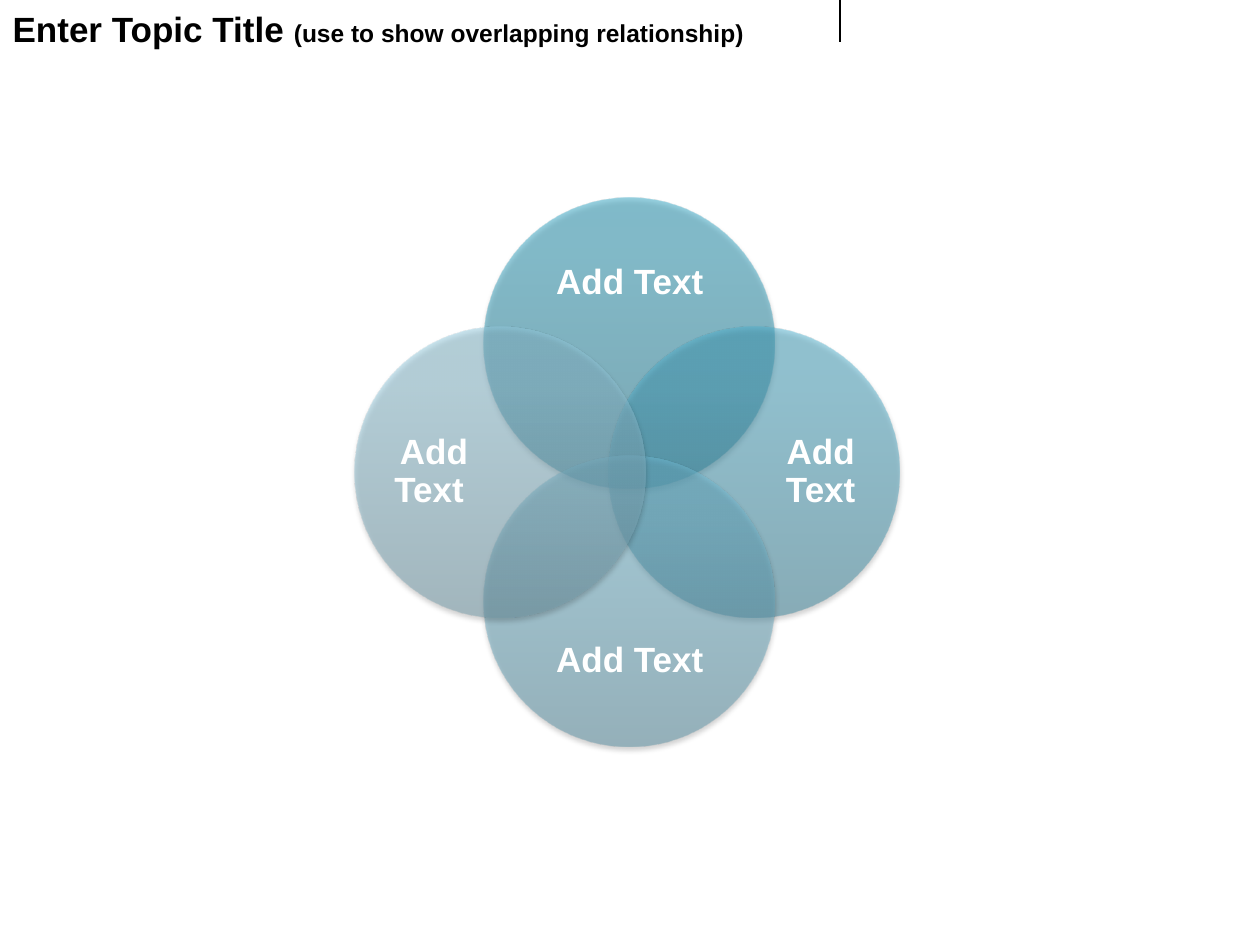
from dataclasses import dataclass

from lxml import etree
from pptx import Presentation
from pptx.dml.color import RGBColor
from pptx.enum import shapes, text
from pptx.oxml import parse_xml
from pptx.oxml.ns import nsdecls, qn
from pptx.util import Pt

COLORS = {
    "ink": "000000",
    "label": "FFFFFF",
    "top": ("267C93", "32A1BE", "2FA3C2"),
    "right": ("3E869C", "50AECA", "4EB0CD"),
    "bottom": ("588FA2", "72BAD2", "71BCD5"),
    "left": ("729AA8", "94C8DB", "93C9DD"),
}
FONT = "Arial"
DIAMETER = 166.3
STEP = 73.7  # offset of each circle from the centre of the ring
HUB_X, HUB_Y = 276.5, 186.7  # left and top of a circle placed at the centre
WIDE = (128, 52.6)
TALL = (64, 128)


@dataclass
class Circle:
    name: str
    left: float
    top: float
    label: str
    label_at: tuple[float, float]
    label_size: tuple[float, float]


CIRCLES = [
    Circle("top", HUB_X, HUB_Y - STEP, "Add Text", (295.9, 135.4), WIDE),
    Circle("right", HUB_X + 71.3, HUB_Y, "Add Text", (437, 205.9), TALL),
    Circle("bottom", HUB_X, HUB_Y + STEP, "Add Text", (295.9, 351.4), WIDE),
    Circle("left", HUB_X - STEP, HUB_Y, "Add Text ", (216, 205.9), TALL),
]


def style_font(font, size: float, color: str) -> None:
    font.name, font.size, font.bold = FONT, Pt(size), True
    font.color.rgb = RGBColor.from_string(COLORS[color])


def set_gradient(sp, colors: tuple[str, ...]) -> None:
    """Half-transparent gradient running from bottom to top."""
    stops = "".join(
        f'<a:gs pos="{pos}"><a:srgbClr val="{c}"><a:alpha val="50000"/></a:srgbClr></a:gs>'
        for pos, c in zip((0, 80000, 100000), colors))
    grad = parse_xml(
        f'<a:gradFill {nsdecls("a")} rotWithShape="1"><a:gsLst>{stops}</a:gsLst>'
        '<a:lin ang="16200000" scaled="0"/></a:gradFill>')
    sp.fill.background()
    props = sp._element.spPr
    props.replace(props.find(qn("a:noFill")), grad)


def set_shadow(sp) -> None:
    sp.shadow.inherit = False
    sp._element.spPr.find(qn("a:effectLst")).append(parse_xml(
        f'<a:outerShdw {nsdecls("a")} blurRad="{Pt(3.1)}" dist="{Pt(1.8)}" dir="5400000" '
        'rotWithShape="0"><a:srgbClr val="000000"><a:alpha val="35000"/></a:srgbClr>'
        '</a:outerShdw>'))


def draw_circle(slide, circle: Circle) -> None:
    sp = slide.shapes.add_shape(shapes.MSO_SHAPE.OVAL, Pt(circle.left), Pt(circle.top),
                                Pt(DIAMETER), Pt(DIAMETER))
    sp.line.fill.background()
    set_gradient(sp, COLORS[circle.name])
    set_shadow(sp)

    box = slide.shapes.add_textbox(*map(Pt, circle.label_at + circle.label_size))
    tf = box.text_frame
    tf.word_wrap = True
    tf.vertical_anchor = text.MSO_ANCHOR.MIDDLE
    tf.margin_left = tf.margin_right = tf.margin_top = tf.margin_bottom = 0
    p = tf.paragraphs[0]
    p.text = circle.label
    p.alignment = text.PP_ALIGN.CENTER
    p.line_spacing = 0.9
    style_font(p.font, 20, "label")


def draw_title(slide) -> None:
    title = slide.shapes.title
    title.left, title.top, title.width, title.height = Pt(0), Pt(0.7), Pt(456), Pt(31.7)
    tf = title.text_frame
    tf.word_wrap = True
    tf.auto_size = text.MSO_AUTO_SIZE.NONE
    tf.vertical_anchor = text.MSO_ANCHOR.TOP
    p = tf.paragraphs[0]
    p.alignment = text.PP_ALIGN.LEFT
    for words, size in (("Enter Topic Title ", 20),
                        ("(use to show overlapping relationship)", 14)):
        r = p.add_run()
        r.text = words
        style_font(r.font, size, "ink")


def draw_divider(slide) -> None:
    line = slide.shapes.add_connector(shapes.MSO_CONNECTOR.STRAIGHT,
                                      Pt(480), Pt(0), Pt(480), Pt(24))
    line.line.width = Pt(0.75)
    line.line.color.rgb = RGBColor.from_string(COLORS["ink"])
    etree.SubElement(line._element.spPr, qn("a:effectLst"))


def main() -> None:
    prs = Presentation()
    prs.slide_width, prs.slide_height = Pt(720), Pt(540)
    slide = prs.slides.add_slide(prs.slide_layouts[5])

    # Heading
    draw_divider(slide)
    draw_title(slide)

    # Overlapping circles, back to front
    for circle in CIRCLES:
        draw_circle(slide, circle)

    prs.save("out.pptx")


if __name__ == "__main__":
    main()
